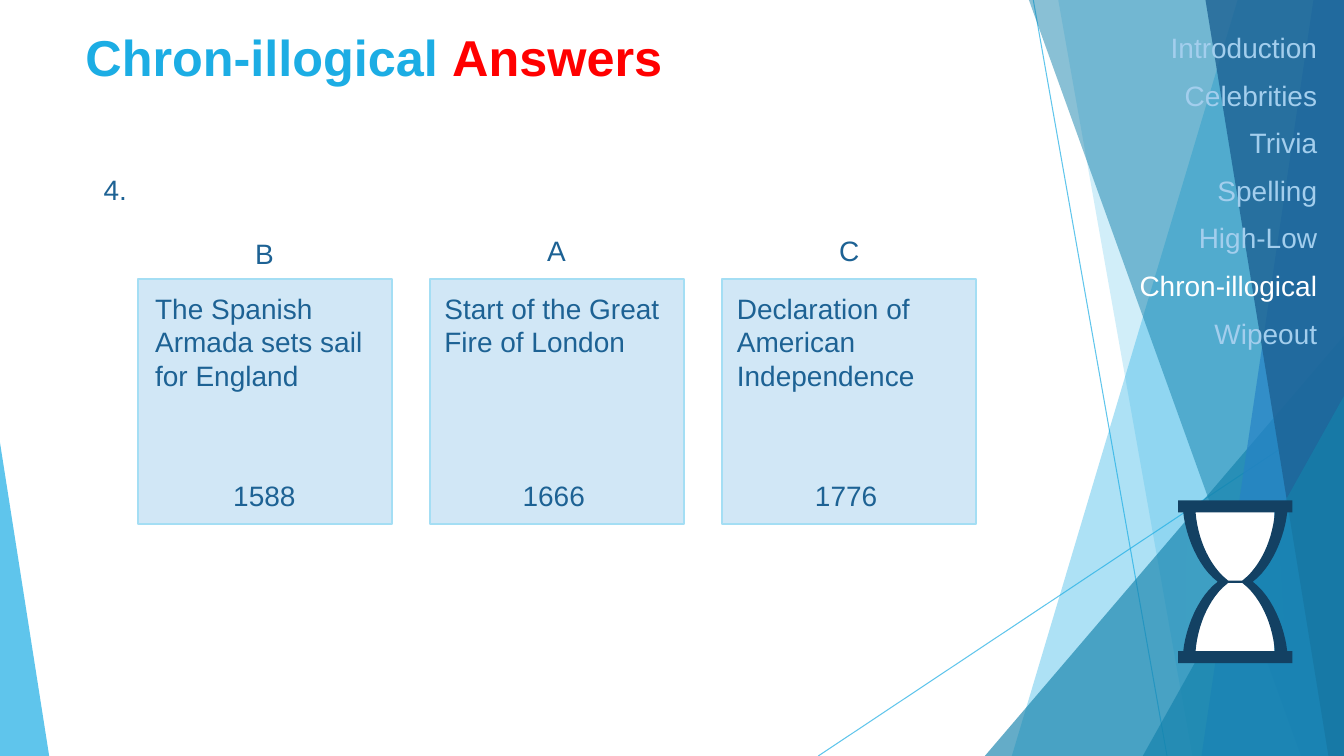
from dataclasses import dataclass

from lxml.etree import SubElement
from pptx import Presentation
from pptx.dml.color import RGBColor
from pptx.enum.shapes import MSO_CONNECTOR, MSO_SHAPE
from pptx.enum.text import MSO_ANCHOR, MSO_AUTO_SIZE, PP_ALIGN
from pptx.oxml.ns import qn
from pptx.util import Cm, Pt

COLOURS = {
    "sky": "1CADE4", "teal": "1482AC", "blue": "2683C6", "navy": "1D6294",
    "card": "D1E7F6", "card_edge": "A4DEF4", "muted": "A3CEED",
    "white": "FFFFFF", "red": "FF0000",
    "glass_right": "1A84B3", "glass_left": "3E9FC3", "frame": "134163",
}
WIDTH, HEIGHT = 33.87, 19.05
CARD_LEFT, CARD_TOP, CARD_PITCH = 3.48, 7.04, 7.36
WAIST_X, WAIST_Y = 31.13, 14.66
Points = list[tuple[float, float]]


@dataclass
class Facet:
    """Background panel from its top and bottom left corners to the right edge."""
    top: float
    bottom: float
    colour: str
    opacity: int


@dataclass
class Wedge:
    """Background right triangle standing on the bottom edge."""
    left: float
    top: float
    width: float
    apex: float
    colour: str
    opacity: int


@dataclass
class Event:
    letter: str
    letter_top: float
    text: str
    year: str
    inset: float
    width: float
    height: float


BACKDROP = [
    Facet(31.19, 25.5, "sky", 36),
    Facet(26.67, 30.05, "sky", 20),
    Wedge(24.82, 8.46, 9.05, 1, "teal", 66),
    Facet(25.93, 32.79, "teal", 50),
    Facet(33.1, 30.28, "blue", 70),
    Facet(30.38, 33.48, "navy", 80),
    Wedge(28.8, 9.98, 5.07, 1, "teal", 66),
    Wedge(0, 11.15, 1.24, 0, "sky", 70),
]
RAYS = [((26.04, 0), (29.41, HEIGHT)), ((WIDTH, 10.24), (20.62, HEIGHT))]
EVENTS = [
    Event("B", 5.84, "The Spanish Armada sets sail for England", "1588", 0.18, 5.99, 2.82),
    Event("A", 5.77, "Start of the Great Fire of London", "1666", 0.11, 6.05, 1.96),
    Event("C", 5.77, "Declaration of American Independence", "1776", 0.12, 6.27, 2.82),
]
ROUNDS = ["Introduction", "Celebrities", "Trivia", "Spelling", "High-Low",
          "Chron-illogical", "Wipeout"]
CURRENT_ROUND = "Chron-illogical"


def rgb(name: str) -> RGBColor:
    return RGBColor.from_string(COLOURS[name])


def set_opacity(shape, percent: int) -> None:
    colour = next(shape.element.iter(qn("a:srgbClr")))
    SubElement(colour, qn("a:alpha"), val=str(percent * 1000))


def paint(shape, colour: str, opacity: int = 100) -> None:
    shape.shadow.inherit = False
    shape.fill.solid()
    shape.fill.fore_color.rgb = rgb(colour)
    shape.line.fill.background()
    if opacity < 100:
        set_opacity(shape, opacity)


def add_outline(slide, contours: list[Points], colour: str, opacity: int = 100) -> None:
    builder = None
    for contour in contours:
        start, *rest = [(Cm(x), Cm(y)) for x, y in contour]
        if builder is None:
            builder = slide.shapes.build_freeform(*start)
        else:
            builder.move_to(*start)
        builder.add_line_segments(rest, close=True)
    paint(builder.convert_to_shape(), colour, opacity)


def add_preset(slide, kind, left: float, top: float, width: float, height: float):
    return slide.shapes.add_shape(kind, Cm(left), Cm(top), Cm(width), Cm(height))


def add_run(paragraph, text: str, colour: str, size: int = 20, bold: bool = False) -> None:
    run = paragraph.add_run()
    run.text = text
    run.font.name, run.font.size, run.font.bold = "Arial", Pt(size), bold
    run.font.color.rgb = rgb(colour)


def add_label(slide, text: str, left: float, top: float, width: float,
              height: float = 1.12, wrap: bool = False, align=PP_ALIGN.LEFT) -> None:
    frame = slide.shapes.add_textbox(Cm(left), Cm(top), Cm(width), Cm(height)).text_frame
    frame.word_wrap = wrap
    frame.auto_size = MSO_AUTO_SIZE.SHAPE_TO_FIT_TEXT
    frame.paragraphs[0].alignment = align
    add_run(frame.paragraphs[0], text, "navy")


def place(placeholder, left: float, top: float, width: float, height: float):
    """Move a placeholder to its spot and in front of the shapes drawn so far."""
    placeholder.left, placeholder.top = Cm(left), Cm(top)
    placeholder.width, placeholder.height = Cm(width), Cm(height)
    placeholder.element.getparent().append(placeholder.element)
    frame = placeholder.text_frame
    frame.word_wrap, frame.auto_size = True, MSO_AUTO_SIZE.NONE
    frame.vertical_anchor = MSO_ANCHOR.TOP
    return frame


def add_backdrop(slide) -> None:
    for start, end in RAYS:
        ray = slide.shapes.add_connector(
            MSO_CONNECTOR.STRAIGHT, *[Cm(value) for value in (*start, *end)])
        ray.line.color.rgb, ray.line.width = rgb("sky"), Pt(0.75)
        set_opacity(ray, 70)
        SubElement(ray.element.spPr, qn("a:effectLst"))
    for part in BACKDROP:
        if isinstance(part, Facet):
            corners = [(part.top, 0), (WIDTH, 0), (WIDTH, HEIGHT), (part.bottom, HEIGHT)]
            add_outline(slide, [corners], part.colour, part.opacity)
        else:
            wedge = add_preset(slide, MSO_SHAPE.ISOSCELES_TRIANGLE, part.left, part.top,
                               part.width, HEIGHT - part.top)
            wedge.adjustments[0] = part.apex
            paint(wedge, part.colour, part.opacity)


def add_event(slide, event: Event, left: float) -> None:
    card = add_preset(slide, MSO_SHAPE.RECTANGLE, left, CARD_TOP, 6.4, 6.17)
    paint(card, "card")
    card.line.color.rgb, card.line.width = rgb("card_edge"), Pt(1.5)
    add_label(slide, event.letter, left + 2.7, event.letter_top, 1)
    add_label(slide, event.text, left + event.inset, 7.21, event.width, event.height, wrap=True)
    add_label(slide, event.year, left + event.inset + 1.95, 11.94, 2.11,
              align=PP_ALIGN.CENTER)


def bezier(controls: Points, steps: int = 12) -> Points:
    def at(t: float) -> tuple[float, float]:
        weights = ((1 - t) ** 3, 3 * t * (1 - t) ** 2, 3 * t * t * (1 - t), t ** 3)
        x, y = [sum(w * c for w, c in zip(weights, axis)) for axis in zip(*controls)]
        return x, y
    return [at(step / steps) for step in range(steps + 1)]


def mirrored(points: Points, x_sign: int, y_sign: int) -> Points:
    """Append the reflection of the points, in reverse order."""
    return points + [(x * x_sign, y * y_sign) for x, y in reversed(points)]


def add_hourglass(slide) -> None:
    paint(add_preset(slide, MSO_SHAPE.RECTANGLE, 30.12, 12.88, 2, 3.53), "white")
    # Patches beside the waist
    add_outline(slide, [[(32.26, 15.72), (32.36, 15.57), (32.26, 14), (32.16, 13.61),
                         (31.42, 14.66)]], "glass_right")
    add_outline(slide, [[(30, 13.56), (29.9, 13.72), (29.87, 15.7), (30.1, 15.7),
                         (30.84, 14.63)]], "glass_left")
    # Frame with two bulb openings, as offsets from the waist
    quarter = [(1.44, -2.05), (1.44, -1.75)]
    quarter += bezier([(1.31, -1.75), (1.25, -1.16), (0.93, -0.36), (0.44, 0)])
    bulb_side = bezier([(1, -1.75), (0.95, -1.16), (0.72, -0.55), (0.32, -0.15)])
    upper_bulb = mirrored(bulb_side + [(0.18, -0.03)], -1, 1)
    lower_bulb = [(x, -y) for x, y in upper_bulb]
    silhouette = mirrored(mirrored(quarter, 1, -1), -1, 1)
    add_outline(slide, [[(WAIST_X + x, WAIST_Y + y) for x, y in contour]
                        for contour in (silhouette, upper_bulb, lower_bulb)], "frame")


def main() -> None:
    presentation = Presentation()
    presentation.slide_width, presentation.slide_height = Cm(WIDTH), Cm(HEIGHT)
    slide = presentation.slides.add_slide(presentation.slide_layouts[1])
    add_backdrop(slide)

    # Title
    heading = place(slide.shapes.title, 1.9, 0.53, 28.88, 3.2).paragraphs[0]
    heading.alignment = PP_ALIGN.LEFT
    add_run(heading, "Chron-illogical ", "sky", 36, True)
    add_run(heading, "Answers", "red", 36, True)

    # Question number and event cards
    add_label(slide, "4.", 2.36, 4.22, 1.12)
    for index, event in enumerate(EVENTS):
        add_event(slide, event, CARD_LEFT + index * CARD_PITCH)

    # List of rounds
    rounds = place(slide.placeholders[1], 26.82, 0.64, 6.63, 11.48)
    for index, name in enumerate(ROUNDS):
        entry = rounds.add_paragraph() if index else rounds.paragraphs[0]
        entry.alignment, entry.space_before = PP_ALIGN.RIGHT, Pt(10)
        properties = entry._p.get_or_add_pPr()
        properties.set("marL", "0")
        properties.set("indent", "0")
        SubElement(properties, qn("a:buNone"))
        add_run(entry, name, "white" if name == CURRENT_ROUND else "muted")

    add_hourglass(slide)
    presentation.save("out.pptx")


if __name__ == "__main__":
    main()
